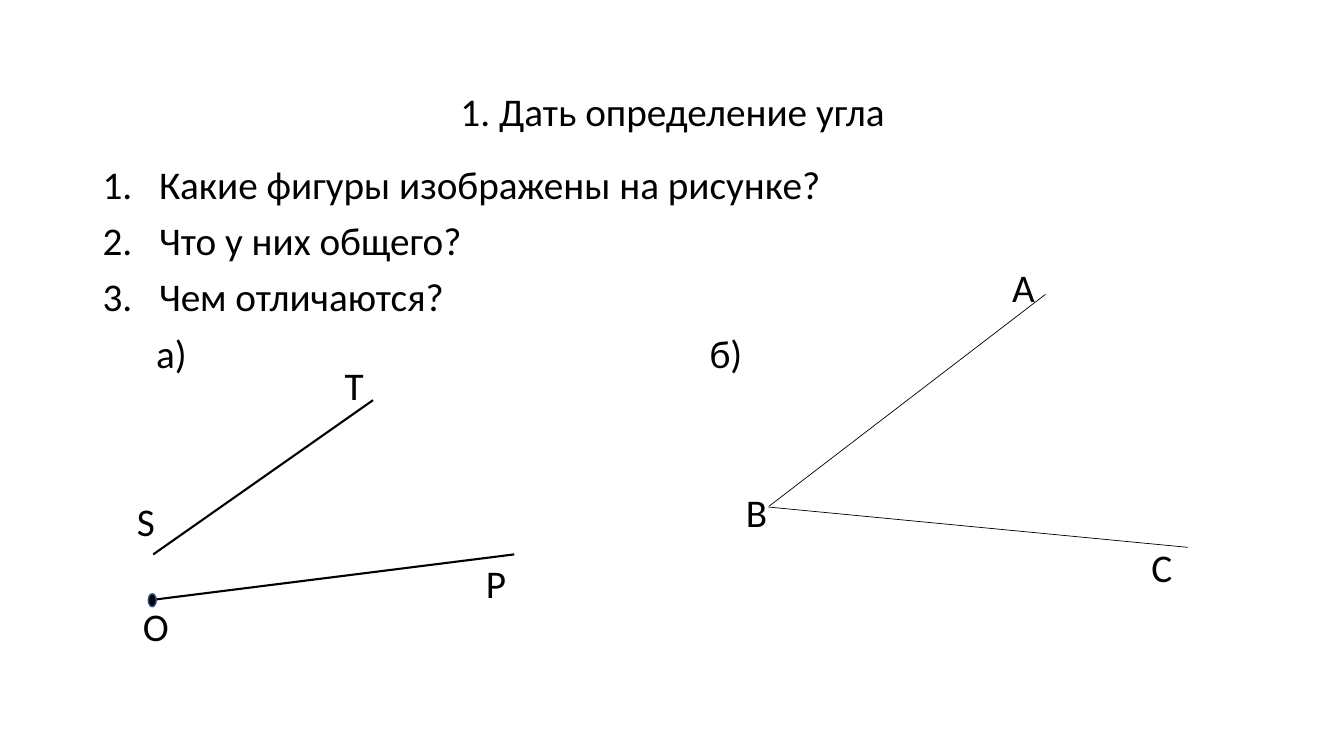
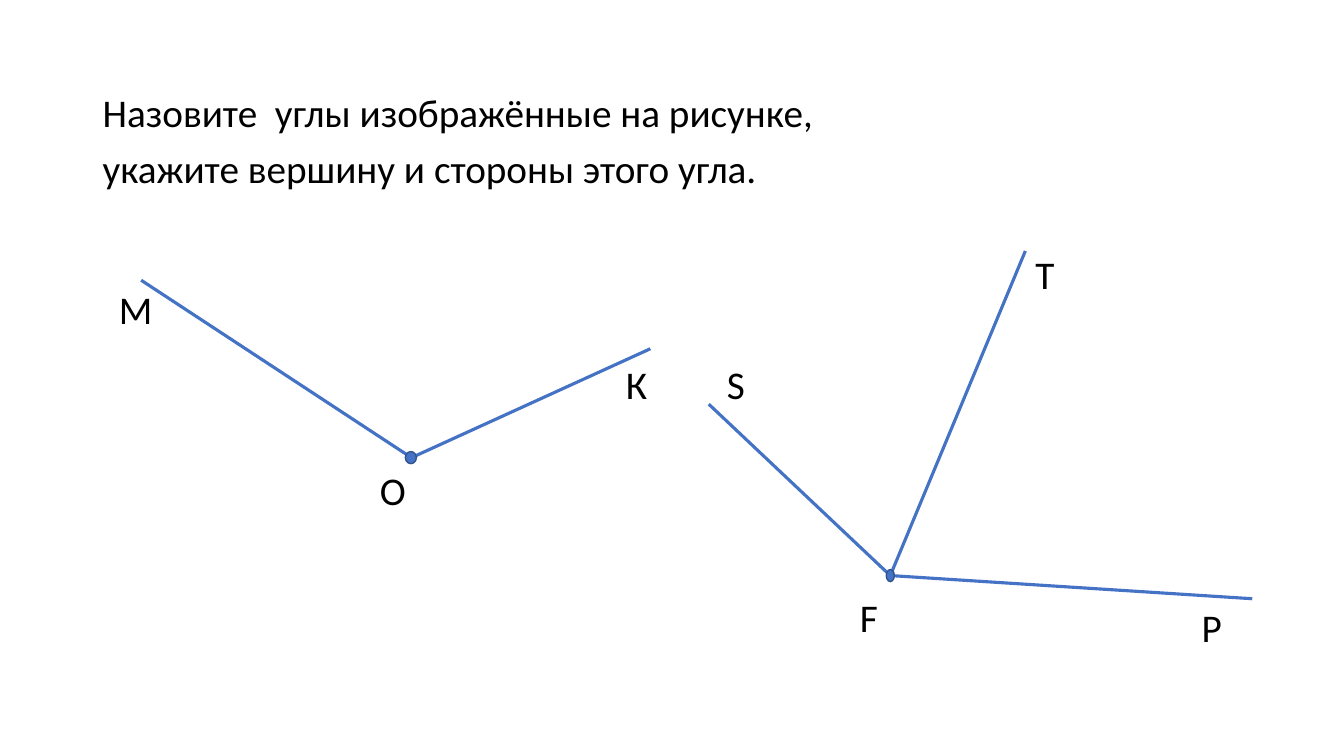
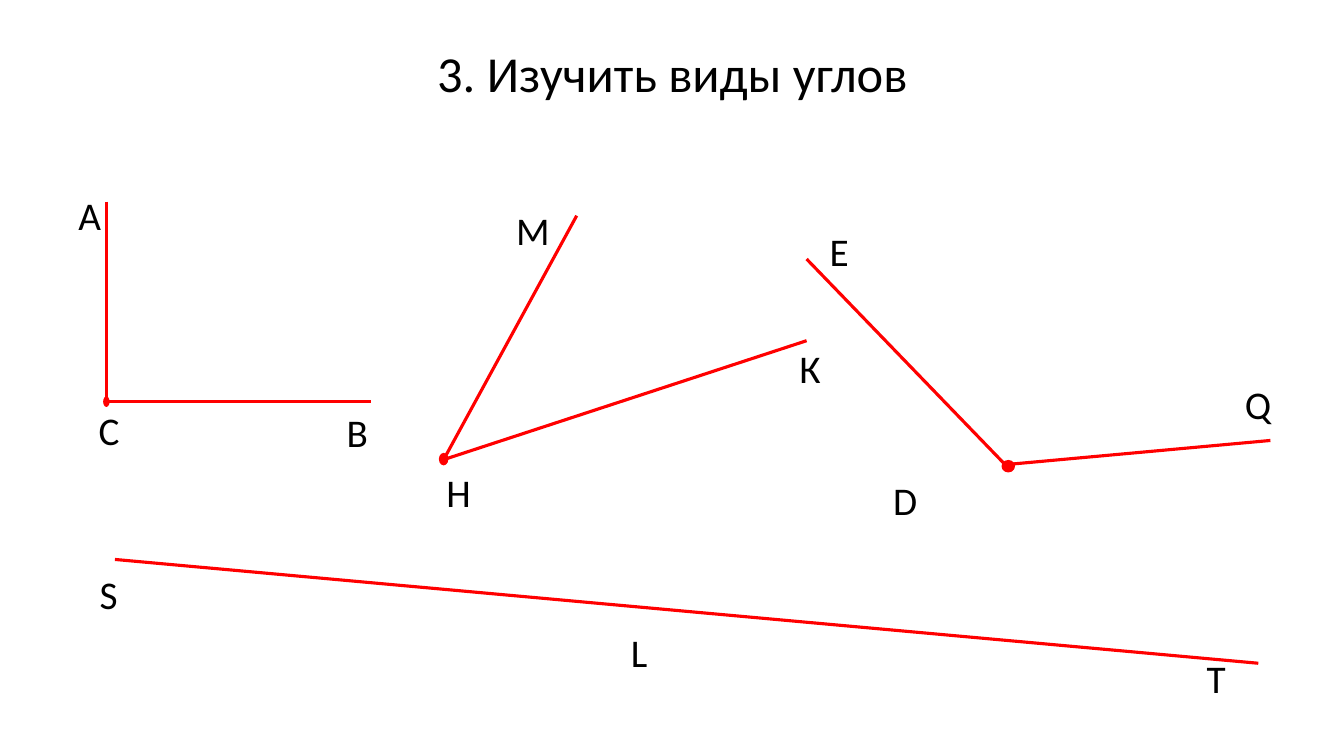
import pptx
import pptx.dml.color
import pptx.enum.shapes
import pptx.enum.text
import pptx.oxml.ns
import pptx.util
from lxml import etree
from pptx.util import Inches

COLORS = {
    "text": "000000",
    "blue": "4472C4",
    "dark_blue": "325491",
    "red": "FF0000",
}
FONT = "Calibri"
TEXT_SIZE = 28
CONTENT_LEFT, CONTENT_WIDTH = 0.92, 11.5
LABEL_HEIGHT = 0.57
BODY_BOTTOM = 6.76

# Lines: x1, y1, x2, y2, width. Vertices: left, top, width, height.
# Labels: text, left, top, width.
SLIDES = [
    {
        "title": ("1. Дать определение угла", TEXT_SIZE, 0.05),
        "body_top": 1.59,
        "body": [
            "Какие фигуры изображены на рисунке?",
            "Что у них общего?",
            "Чем отличаются?",
            "\tа)\tб)",
        ],
        "numbered": 3,
        "tabs": [0.53, 6.02],
        "line_color": "text",
        "outline_color": "dark_blue",
        "lines": [
            (1.52, 5.5, 3.7, 3.97, 1.5),
            (1.52, 5.95, 5.1, 5.5, 1.5),
            (7.63, 5.02, 10.37, 2.92, 0.5),
            (7.62, 5.03, 11.78, 5.43, 0.5),
        ],
        "vertices": [(1.47, 5.89, 0.08, 0.13)],
        "labels": [
            ("S", 1.26, 4.88, 0.4),
            ("T", 3.32, 3.54, 0.39),
            ("O", 1.32, 5.93, 0.46),
            ("P", 4.72, 5.5, 0.41),
            ("A", 9.94, 2.56, 0.43),
            ("B", 7.3, 4.8, 0.42),
            ("C", 11.32, 5.34, 0.41),
        ],
    },
    {
        "body_top": 0.88,
        "body": [
            "Назовите  углы изображённые на рисунке,",
            "укажите вершину и стороны этого угла.",
        ],
        "numbered": 0,
        "tabs": [],
        "line_color": "blue",
        "outline_color": "dark_blue",
        "lines": [
            (1.4, 2.78, 4.08, 4.54, 2.25),
            (4.06, 4.55, 6.45, 3.46, 2.25),
            (7.03, 4.01, 8.83, 5.71, 2.25),
            (8.83, 5.71, 10.17, 2.49, 2.25),
            (8.83, 5.71, 12.42, 5.94, 2.25),
        ],
        "vertices": [(4.02, 4.48, 0.11, 0.12), (8.79, 5.65, 0.08, 0.12)],
        "labels": [
            ("М", 1.08, 2.78, 0.54),
            ("О", 3.67, 4.58, 0.46),
            ("К", 6.11, 3.53, 0.42),
            ("S", 7.11, 3.53, 0.38),
            ("T", 10.17, 2.43, 0.39),
            ("F", 8.43, 5.84, 0.38),
            ("P", 11.82, 5.94, 0.41),
        ],
    },
    {
        "title": ("3. Изучить виды углов", 36, 0.79),
        "line_color": "red",
        "outline_color": "red",
        "lines": [
            (1.06, 2, 1.06, 4, 2.25),
            (1.06, 3.98, 3.68, 3.98, 2.25),
            (5.72, 2.14, 4.4, 4.56, 2.25),
            (4.4, 4.56, 8, 3.38, 2.25),
            (8, 2.57, 9.97, 4.61, 2.25),
            (9.97, 4.61, 12.6, 4.37, 2.25),
            (1.14, 5.55, 12.48, 6.58, 2.25),
        ],
        "vertices": [
            (1.03, 3.94, 0.05, 0.09),
            (4.36, 4.5, 0.08, 0.11),
            (9.94, 4.57, 0.12, 0.11),
        ],
        "labels": [
            ("А", 0.68, 1.85, 0.43),
            ("С", 0.88, 3.98, 0.41),
            ("В", 3.34, 4, 0.42),
            ("М", 5.02, 2, 0.54),
            ("Н", 4.33, 4.6, 0.45),
            ("К", 7.83, 3.37, 0.42),
            ("Е", 8.13, 2.21, 0.39),
            ("D", 8.76, 4.68, 0.44),
            ("Q", 12.25, 3.72, 0.47),
            ("S", 0.89, 5.61, 0.38),
            ("L", 6.16, 6.18, 0.37),
            ("Т", 11.87, 6.44, 0.39),
        ],
    },
]


def rgb(name):
    return pptx.dml.color.RGBColor.from_string(COLORS[name])


def add_text(slide, lines, left, top, width, height, size=TEXT_SIZE, wrap=True):
    text_frame = slide.shapes.add_textbox(
        Inches(left), Inches(top), Inches(width), Inches(height)
    ).text_frame
    text_frame.word_wrap = wrap
    text_frame.text = "\n".join(lines)
    for paragraph in text_frame.paragraphs:
        for run in paragraph.runs:
            run.font.name = FONT
            run.font.size = pptx.util.Pt(size)
            run.font.color.rgb = rgb("text")
    return text_frame


presentation = pptx.Presentation()
presentation.slide_width = Inches(13.33)
presentation.slide_height = Inches(7.5)
qualified = pptx.oxml.ns.qn

for content in SLIDES:
    slide = presentation.slides.add_slide(presentation.slide_layouts[6])

    if "title" in content:
        title, size, margin_bottom = content["title"]
        title_frame = add_text(
            slide, [title], CONTENT_LEFT, 0.4, CONTENT_WIDTH, 1.45, size
        )
        title_frame.vertical_anchor = pptx.enum.text.MSO_ANCHOR.MIDDLE
        title_frame.margin_bottom = Inches(margin_bottom)
        title_frame.paragraphs[0].alignment = pptx.enum.text.PP_ALIGN.CENTER
        title_frame.paragraphs[0].line_spacing = 0.9

    if "body" in content:
        top = content["body_top"]
        body_frame = add_text(
            slide, content["body"], CONTENT_LEFT, top, CONTENT_WIDTH, BODY_BOTTOM - top
        )
        for index, paragraph in enumerate(body_frame.paragraphs):
            properties = paragraph._p.get_or_add_pPr()
            if index < content["numbered"]:
                properties.set("marL", str(Inches(0.56)))
                properties.set("indent", str(Inches(-0.56)))
                etree.SubElement(
                    properties, qualified("a:buAutoNum"), type="arabicPeriod"
                )
            elif content["tabs"]:
                tab_list = etree.SubElement(properties, qualified("a:tabLst"))
                for position in content["tabs"]:
                    etree.SubElement(
                        tab_list, qualified("a:tab"), pos=str(Inches(position)), algn="l"
                    )
            paragraph.line_spacing = 0.9
            if index > 0:
                paragraph.space_before = pptx.util.Pt(10)

    for x1, y1, x2, y2, width in content["lines"]:
        side = slide.shapes.add_connector(
            pptx.enum.shapes.MSO_CONNECTOR.STRAIGHT,
            Inches(x1), Inches(y1), Inches(x2), Inches(y2),
        )
        side.line.color.rgb = rgb(content["line_color"])
        side.line.width = pptx.util.Pt(width)
        etree.SubElement(side._element.spPr, qualified("a:effectLst"))

    for bounds in content["vertices"]:
        vertex = slide.shapes.add_shape(
            pptx.enum.shapes.MSO_SHAPE.OVAL, *map(Inches, bounds)
        )
        vertex.shadow.inherit = False
        vertex.fill.solid()
        vertex.fill.fore_color.rgb = rgb(content["line_color"])
        vertex.line.color.rgb = rgb(content["outline_color"])
        vertex.line.width = pptx.util.Pt(1)

    for letter, left, top, width in content["labels"]:
        add_text(slide, [letter], left, top, width, LABEL_HEIGHT, wrap=False)

presentation.save("out.pptx")
